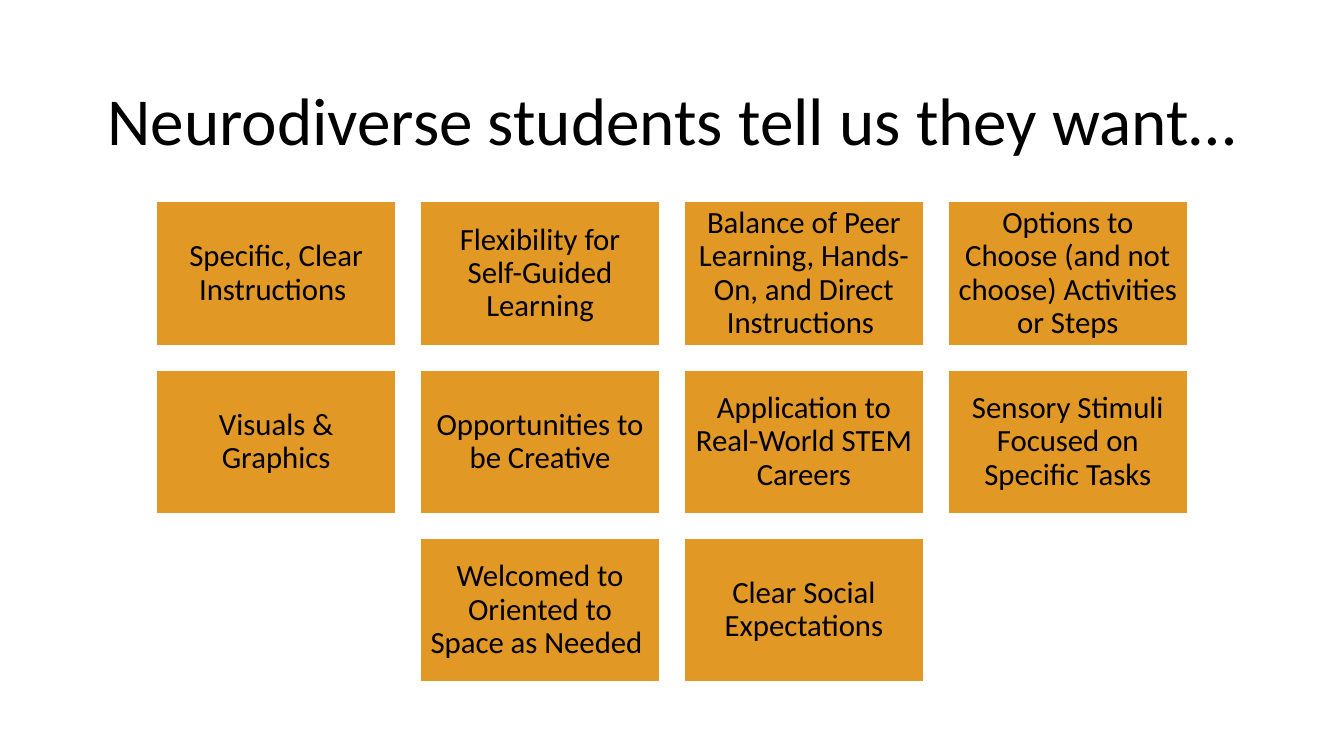
from dataclasses import dataclass

from pptx import Presentation
from pptx.dml.color import RGBColor
from pptx.enum import shapes, text
from pptx.util import Cm, Pt

FONT = "Calibri"
BLACK, WHITE, ORANGE = "000000", "FFFFFF", "E19825"
SLIDE_W, SLIDE_H = 33.87, 19.05

# Card grid, in centimetres
CARD_W, CARD_H, GAP = 6.04, 3.63, 0.61
GRID_TOP = 5.08
INSET = 0.23


@dataclass
class Card:
    label: str
    left: float
    top: float


ROWS = [
    [
        "Specific, Clear Instructions ",
        "Flexibility for Self-Guided Learning",
        "Balance of Peer Learning, Hands-On, and Direct Instructions ",
        "Options to Choose (and not choose) Activities or Steps",
    ],
    [
        "Visuals & Graphics",
        "Opportunities to be Creative",
        "Application to Real-World STEM Careers",
        "Sensory Stimuli Focused on Specific Tasks",
    ],
    [
        "Welcomed to Oriented to Space as Needed ",
        "Clear Social Expectations",
    ],
]


def color(value: str) -> RGBColor:
    return RGBColor.from_string(value)


def set_text(sp, label: str, size: float) -> None:
    tf = sp.text_frame
    tf.text = label
    tf.word_wrap = True
    tf.auto_size = text.MSO_AUTO_SIZE.NONE
    tf.vertical_anchor = text.MSO_ANCHOR.MIDDLE
    p = tf.paragraphs[0]
    p.alignment = text.PP_ALIGN.CENTER
    p.line_spacing = 0.9
    p.font.name = FONT
    p.font.size = Pt(size)
    p.font.color.rgb = color(BLACK)


def layout_cards() -> list[Card]:
    """Centre every row of cards on the slide."""
    cards = []
    for row, labels in enumerate(ROWS):
        row_width = len(labels) * (CARD_W + GAP) - GAP
        left = (SLIDE_W - row_width) / 2
        top = GRID_TOP + row * (CARD_H + GAP)
        cards += [Card(label, left + col * (CARD_W + GAP), top)
                  for col, label in enumerate(labels)]
    return cards


def draw_card(s, card: Card) -> None:
    sp = s.shapes.add_shape(shapes.MSO_SHAPE.RECTANGLE, Cm(card.left),
                            Cm(card.top), Cm(CARD_W), Cm(CARD_H))
    sp.shadow.inherit = False
    sp.fill.solid()
    sp.fill.fore_color.rgb = color(ORANGE)
    sp.line.color.rgb = color(WHITE)
    sp.line.width = Pt(1)
    tf = sp.text_frame
    tf.margin_left = tf.margin_right = Cm(INSET)
    tf.margin_top = tf.margin_bottom = Cm(INSET)
    set_text(sp, card.label, 22)


def main() -> None:
    prs = Presentation()
    prs.slide_width, prs.slide_height = Cm(SLIDE_W), Cm(SLIDE_H)
    s = prs.slides.add_slide(prs.slide_layouts[5])

    # Title
    title = s.shapes.title
    title.left, title.top = Cm(2.33), Cm(1.55)
    title.width, title.height = Cm(29.21), Cm(3.15)
    set_text(title, "Neurodiverse students tell us they want…", 48)

    # Cards
    for card in layout_cards():
        draw_card(s, card)

    prs.save("out.pptx")


if __name__ == "__main__":
    main()
